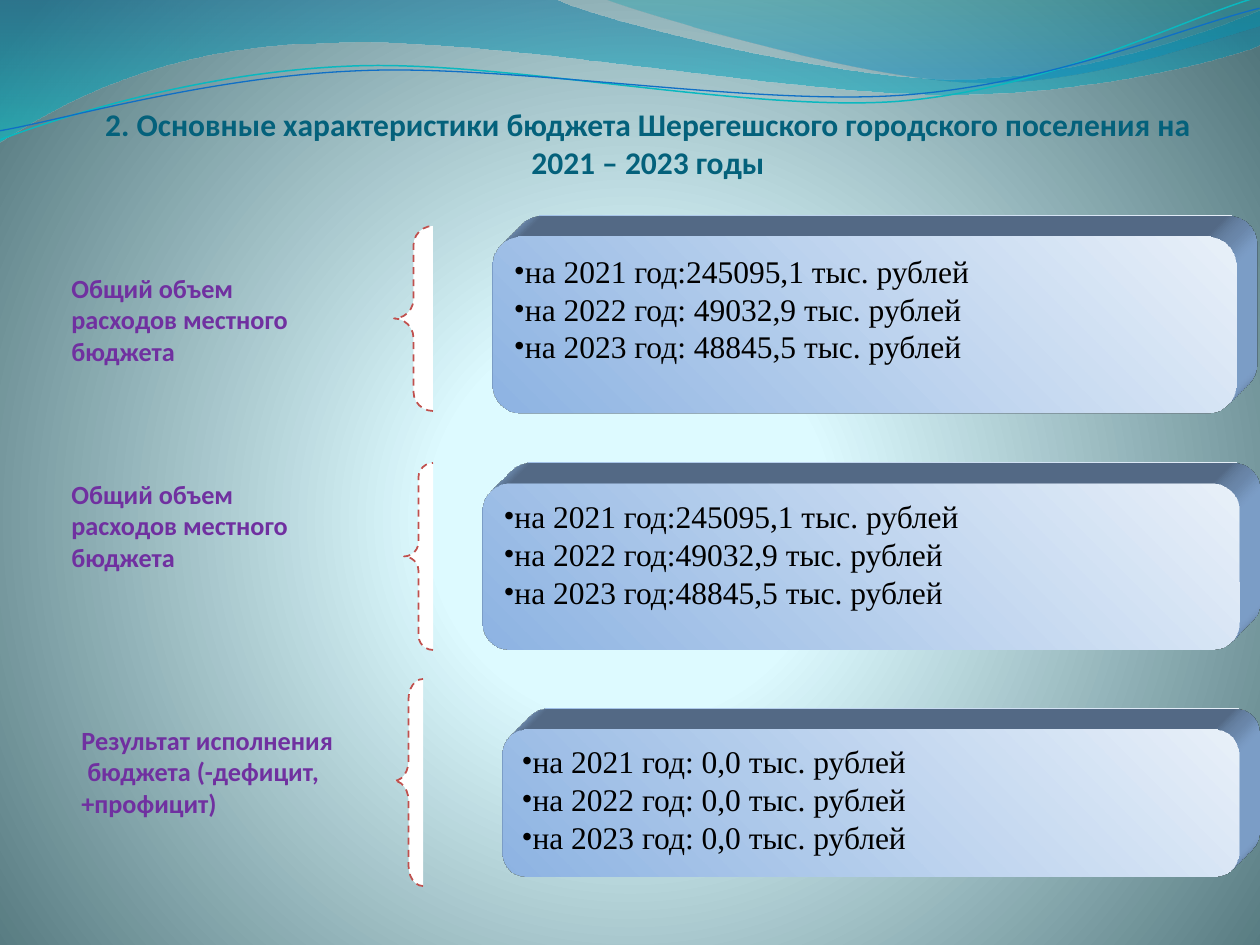
from lxml import etree
from pptx import Presentation
from pptx.dml.color import RGBColor
from pptx.enum.dml import MSO_LINE
from pptx.enum.shapes import MSO_SHAPE
from pptx.enum.text import MSO_ANCHOR, PP_ALIGN
from pptx.oxml import parse_xml
from pptx.oxml.ns import qn
from pptx.util import Pt

PX = 914400 / 126
NS = 'xmlns:a="http://schemas.openxmlformats.org/drawingml/2006/main"'
ROUND_BOX, BRACE = MSO_SHAPE.ROUNDED_RECTANGLE, MSO_SHAPE.LEFT_BRACE
DASH, TOP, BOTTOM = MSO_LINE.DASH, MSO_ANCHOR.TOP, MSO_ANCHOR.BOTTOM
LEFT, CENTER = PP_ALIGN.LEFT, PP_ALIGN.CENTER

TITLE_TEAL = RGBColor(0x04, 0x61, 0x7B)
LABEL_PURPLE = RGBColor(0x70, 0x30, 0xA0)
BRACE_RED = RGBColor(0xC0, 0x50, 0x4D)
WHITE = RGBColor(0xFF, 0xFF, 0xFF)
BLACK = RGBColor(0, 0, 0)
LINE_TEAL = RGBColor(0x0A, 0xB8, 0xBF)
LINE_BLUE = RGBColor(0x0F, 0x6F, 0xC6)
BOX_BLUE = RGBColor(0x8D, 0xB3, 0xE2)
BOX_PALE = RGBColor(0xE8, 0xF0, 0xF9)
WAVE_BLUE = RGBColor(0x00, 0x74, 0xA1)
WAVE_CYAN = RGBColor(0x00, 0xC6, 0xCF)
CREST_TEAL = RGBColor(0x00, 0xA1, 0xA9)
CREST_BLUE = RGBColor(0x00, 0x8B, 0xBF)
BG_LIGHT = RGBColor(0xDE, 0xFB, 0xFF)
BG_MID = RGBColor(0xDD, 0xFA, 0xFF)
BG_DARK = RGBColor(0x52, 0x76, 0x7C)


def set_gradient(fill, holder, stops, direction):
    """Fill with stops of (position %, colour, opacity %)."""
    fill.gradient()
    old = holder.find(qn("a:gradFill"))
    marks = "".join(
        f'<a:gs pos="{pos * 1000}"><a:srgbClr val="{colour}">'
        f'<a:alpha val="{opacity * 1000}"/></a:srgbClr></a:gs>'
        for pos, colour, opacity in stops)
    new = parse_xml(f'<a:gradFill {NS} rotWithShape="1"><a:gsLst>{marks}</a:gsLst>{direction}</a:gradFill>')
    holder.replace(old, new)


def add_curve(start, segments, close):
    """Outline of straight (1 point) and Bezier (3 points) segments, in px."""
    points = [start] + [point for segment in segments for point in segment]
    emu = [(round(x * PX), round(y * PX)) for x, y in points]
    builder = slide.shapes.build_freeform(*emu[0], scale=1.0)
    builder.add_line_segments(emu[1:], close=close)
    curve = builder.convert_to_shape()
    curve.shadow.inherit = False
    steps = iter(list(curve.element.iter(qn("a:lnTo"))))
    for segment in segments:
        first = next(steps)
        if len(segment) == 3:
            first.tag = qn("a:cubicBezTo")
            for _ in range(2):
                step = next(steps)
                first.append(step[0])
                step.getparent().remove(step)
    return curve


prs = Presentation()
prs.slide_width, prs.slide_height = round(1260 * PX), round(945 * PX)
slide = prs.slides.add_slide(prs.slide_layouts[6])

# Background
background = slide.background.fill
background.solid()
set_gradient(background, slide.element.cSld.find(qn("p:bg")).find(qn("p:bgPr")),
             [(0, BG_LIGHT, 100), (25, BG_MID, 100), (100, BG_DARK, 100)],
             '<a:path path="circle"><a:fillToRect l="10000" t="110000" r="10000" b="100000"/></a:path>')

# Waves along the top
waves = [
    ((0, 0), [[(554, -1)],
              [(600, 21), (837, 79), (955, 79)], [(1075, 79), (1207, 33), (1260, 11)],
              [(1261, 45)],
              [(1239, 55), (1096, 96), (940, 94)], [(784, 94), (481, 35), (324, 43)],
              [(163, 45), (58, 105), (-1, 142)], [(0, 0)]],
     [(0, WAVE_BLUE, 45), (100, WAVE_CYAN, 55)]),
    ((604, -1), [[(641, 14), (859, 78), (969, 82)], [(1079, 87), (1211, 40), (1260, 26)],
                 [(1260, 0)], [(604, -1)]],
     [(0, CREST_TEAL, 30), (80, CREST_BLUE, 45)]),
]
for start, segments, stops in waves:
    wave = add_curve(start, segments, True)
    wave.line.fill.background()
    set_gradient(wave.fill, wave.element.spPr, stops, '<a:lin ang="5400000" scaled="0"/>')

# Thin lines, tilted after drawing
wave_lines = [
    ((-2, 110), [[(59, 90), (200, 52), (350, 53)], [(499, 53), (745, 118), (896, 114)],
                 [(1049, 109), (1184, 45), (1260, 27)]], LINE_TEAL, 0.85),
    ((-2, 101), [[(57, 94), (207, 57), (358, 58)], [(509, 58), (750, 112), (902, 108)],
                 [(1052, 104), (1188, 52), (1262, 38)]], LINE_BLUE, 0.75),
]
for start, segments, colour, width in wave_lines:
    wave_line = add_curve(start, segments, False)
    wave_line.rotation = 357.3
    wave_line.fill.background()
    wave_line.line.color.rgb = colour
    wave_line.line.width = Pt(width)

# Title
title = slide.shapes.add_textbox(*(round(v * PX) for v in (79, 98, 1138, 120))).text_frame
title.word_wrap = True
title.vertical_anchor = BOTTOM
title.margin_left = title.margin_right = title.margin_top = 0
title.margin_bottom = round(37 * PX)
heading = title.paragraphs[0]
heading.text = "2. Основные характеристики бюджета Шерегешского городского поселения на 2021 – 2023 годы"
heading.alignment = CENTER
heading.font.name, heading.font.size, heading.font.bold = "Calibri", Pt(18), True
heading.font.color.rgb = TITLE_TEAL

# Rows: label, brace, raised box with yearly amounts
SPENDING = ["Общий объем", "расходов местного бюджета"]
RESULT = ["Результат исполнения", " бюджета (-дефицит, +профицит)"]
rows = [
    (SPENDING, (59, 266, 315, 108), (394, 226, 39, 185), (0.496, 0.5), (493, 237, 744, 177),
     ["245095,1", " 49032,9", " 48845,5"]),
    (SPENDING, (59, 472, 315, 146), (404, 463, 29, 187), (0.496, 0.5), (483, 483, 757, 167),
     ["245095,1", "49032,9", "48845,5"]),
    (RESULT, (69, 718, 315, 108), (394, 679, 29, 207), (0.682, 0.492), (502, 729, 737, 148),
     [" 0,0", " 0,0", " 0,0"]),
]
for label_lines, label_at, brace_at, bends, box_at, amounts in rows:
    box = slide.shapes.add_shape(ROUND_BOX, *(round(v * PX) for v in box_at))
    box.adjustments[0] = 0.167
    box.shadow.inherit = False
    box.line.fill.background()
    set_gradient(box.fill, box.element.spPr, [(0, BOX_BLUE, 100), (100, BOX_PALE, 100)],
                 '<a:lin ang="18900000" scaled="1"/>')
    box.element.spPr.append(parse_xml(
        f'<a:scene3d {NS}><a:camera prst="legacyObliqueTopRight"/>'
        '<a:lightRig rig="legacyFlat3" dir="b"/></a:scene3d>'))
    box.element.spPr.append(parse_xml(
        f'<a:sp3d {NS} extrusionH="430200" prstMaterial="legacyMatte">'
        f'<a:extrusionClr><a:srgbClr val="{BOX_BLUE}"/></a:extrusionClr></a:sp3d>'))
    box.text_frame.vertical_anchor = TOP
    box.text_frame.text = "\n".join(
        f"на {year} год:{amount} тыс. рублей" for year, amount in enumerate(amounts, 2021))
    for entry in box.text_frame.paragraphs:
        entry.alignment = LEFT
        entry.font.name, entry.font.size = "Times New Roman", Pt(18)
        entry.font.color.rgb = BLACK
        props = entry._p.get_or_add_pPr()
        props.insert(0, etree.Element(qn("a:buFont"), typeface="Times New Roman"))
        props.insert(1, etree.Element(qn("a:buChar"), char="•"))

    brace = slide.shapes.add_shape(BRACE, *(round(v * PX) for v in brace_at))
    brace.adjustments[0], brace.adjustments[1] = bends
    brace.shadow.inherit = False
    brace.fill.solid()
    brace.fill.fore_color.rgb = WHITE
    brace.line.color.rgb = BRACE_RED
    brace.line.width = Pt(1)
    brace.line.dash_style = DASH

    label = slide.shapes.add_textbox(*(round(v * PX) for v in label_at)).text_frame
    label.word_wrap = True
    label.text = "\n".join(label_lines)
    for line in label.paragraphs:
        line.font.name, line.font.size, line.font.bold = "Calibri", Pt(15), True
        line.font.color.rgb = LABEL_PURPLE

prs.save("out.pptx")
